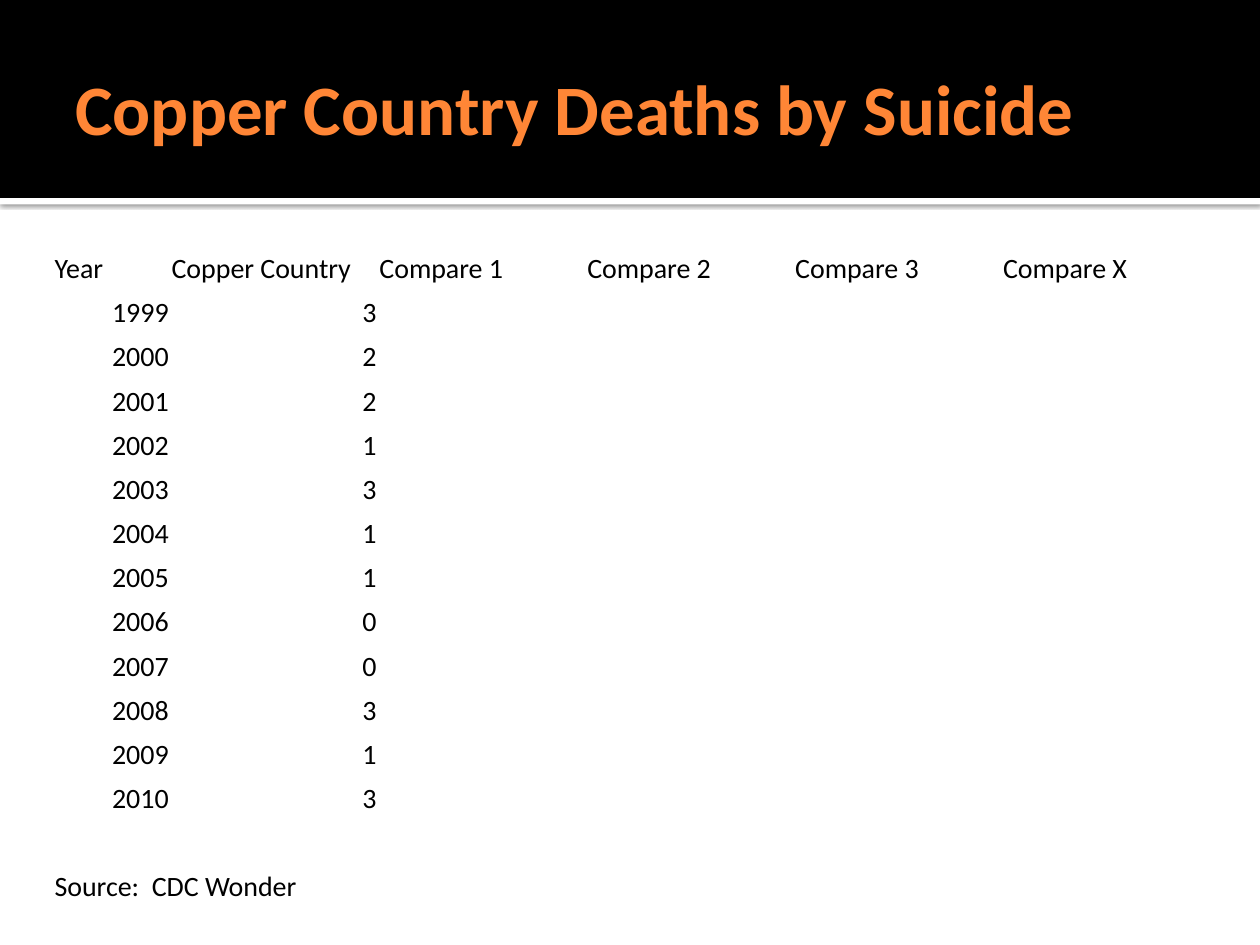
from dataclasses import dataclass

import pptx
import pptx.dml.color
import pptx.enum.shapes
import pptx.enum.text
import pptx.oxml
import pptx.oxml.ns
import pptx.util
from pptx.util import Cm

FONT = "Calibri"
BLACK, WHITE, ORANGE = "000000", "FFFFFF", "FF8636"
Align = pptx.enum.text.PP_ALIGN
Anchor = pptx.enum.text.MSO_ANCHOR

PAGE_WIDTH, PAGE_HEIGHT = 25.4, 19.05
HEADER_HEIGHT = 3.99
YEAR_WIDTH, COUNT_WIDTH, ROW_HEIGHT = 2.36, 4.19, 0.89

HEADINGS = ["Year", "Copper Country", "Compare 1", "Compare 2", "Compare 3", "Compare X"]
FIRST_YEAR = 1999
DEATHS = [3, 2, 2, 1, 3, 1, 1, 0, 0, 3, 1, 3]
SOURCE = "Source:  CDC Wonder"


@dataclass
class Band:
    top: float
    height: float
    color: str
    has_shadow: bool = False


BANDS = [
    Band(HEADER_HEIGHT, 0.13, WHITE, has_shadow=True),
    Band(0, HEADER_HEIGHT, BLACK),
]


def rgb(color: str) -> pptx.dml.color.RGBColor:
    return pptx.dml.color.RGBColor.from_string(color)


def write(frame, text: str, *, size: float, color: str = BLACK,
          bold: bool = False, align=Align.LEFT) -> None:
    para = frame.paragraphs[0]
    para.alignment = align
    span = para.add_run()
    span.text = text
    span.font.name = FONT
    span.font.size = pptx.util.Pt(size)
    span.font.bold = bold
    span.font.color.rgb = rgb(color)


def add_shadow(shape) -> None:
    """Put a soft black shadow just below the shape."""
    effects = shape.element.spPr.find(pptx.oxml.ns.qn("a:effectLst"))
    effects.append(pptx.oxml.parse_xml(
        f'<a:outerShdw {pptx.oxml.ns.nsdecls("a")} blurRad="31750" dist="10160" '
        'dir="5400000" algn="tl" rotWithShape="0">'
        f'<a:srgbClr val="{BLACK}"><a:alpha val="60000"/></a:srgbClr></a:outerShdw>'))


def draw_band(page, band: Band) -> None:
    shape = page.shapes.add_shape(
        pptx.enum.shapes.MSO_SHAPE.RECTANGLE,
        Cm(0), Cm(band.top), Cm(PAGE_WIDTH), Cm(band.height))
    shape.shadow.inherit = False
    shape.fill.solid()
    shape.fill.fore_color.rgb = rgb(band.color)
    shape.line.fill.background()
    if band.has_shadow:
        add_shadow(shape)


def draw_title(page, text: str) -> None:
    title = page.shapes.title
    title.left, title.top = Cm(1.27), Cm(0.43)
    title.width, title.height = Cm(22.86), Cm(3.48)
    frame = title.text_frame
    frame.word_wrap = True
    frame.auto_size = pptx.enum.text.MSO_AUTO_SIZE.NONE
    frame.vertical_anchor = Anchor.MIDDLE
    frame.margin_left = Cm(0.25)
    frame.margin_right = frame.margin_top = frame.margin_bottom = Cm(0.13)
    write(frame, text, size=40.5, color=ORANGE, bold=True)
    # Bring the title in front of the header bands.
    title.element.getparent().append(title.element)


def draw_deaths_table(page) -> None:
    rows = [HEADINGS]
    rows += [[str(year), str(count)] for year, count in enumerate(DEATHS, FIRST_YEAR)]
    rows += [[], [SOURCE]]
    widths = [YEAR_WIDTH] + [COUNT_WIDTH] * (len(HEADINGS) - 1)
    table = page.shapes.add_table(
        len(rows), len(widths), Cm(1.07), Cm(4.88),
        Cm(sum(widths)), Cm(ROW_HEIGHT * len(rows))).table
    table.first_row = table.horz_banding = False
    for column, width in zip(table.columns, widths):
        column.width = Cm(width)
    for row in table.rows:
        row.height = Cm(ROW_HEIGHT)
    for cell in table.iter_cells():
        cell.fill.background()
        cell.vertical_anchor = Anchor.BOTTOM
        cell.margin_left = cell.margin_right = cell.margin_top = Cm(0.03)
        cell.margin_bottom = Cm(0)
    for row_index, texts in enumerate(rows):
        for column_index, text in enumerate(texts):
            align = Align.RIGHT if text.isdigit() else Align.LEFT
            write(table.cell(row_index, column_index).text_frame, text,
                  size=16, align=align)
    last = len(rows) - 1
    table.cell(last, 0).merge(table.cell(last, 1))


def main() -> None:
    deck = pptx.Presentation()
    deck.slide_width, deck.slide_height = Cm(PAGE_WIDTH), Cm(PAGE_HEIGHT)
    page = deck.slides.add_slide(deck.slide_layouts.get_by_name("Title Only"))
    for band in BANDS:
        draw_band(page, band)
    draw_title(page, "Copper Country Deaths by Suicide")
    draw_deaths_table(page)
    deck.save("out.pptx")


if __name__ == "__main__":
    main()
